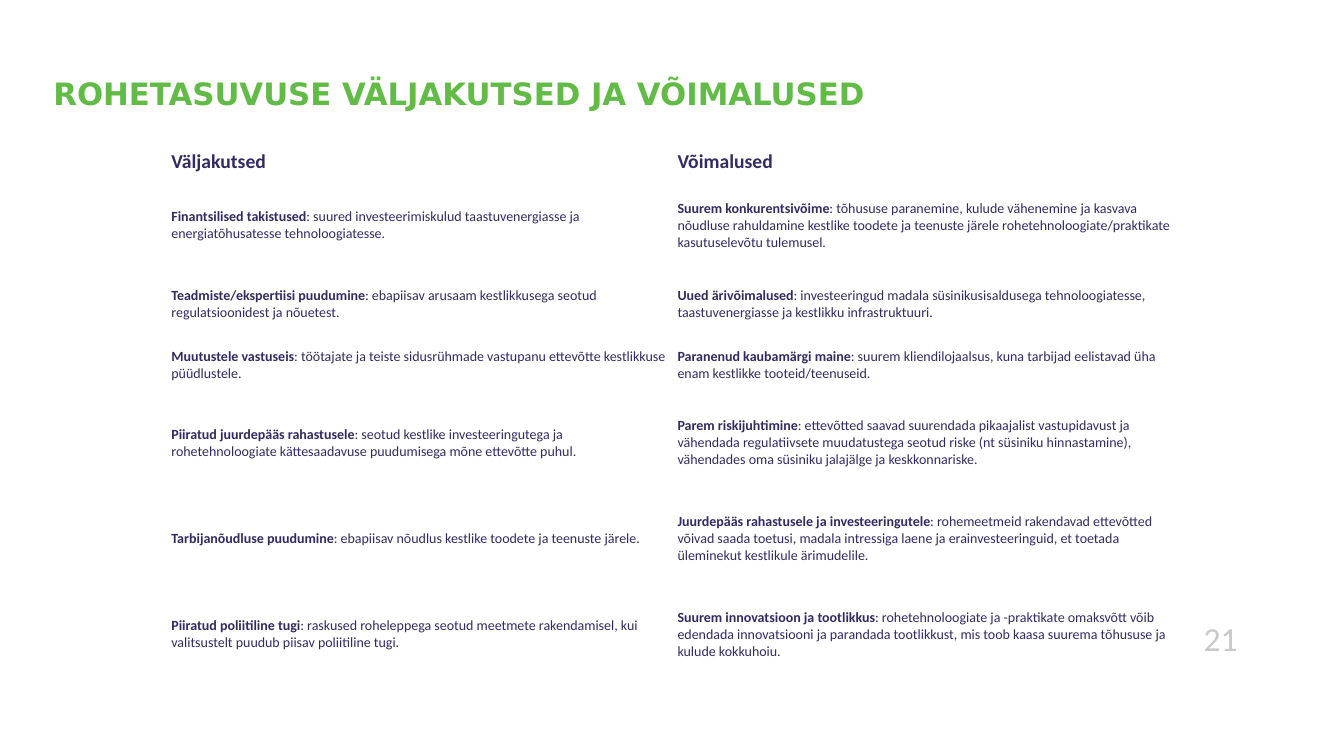
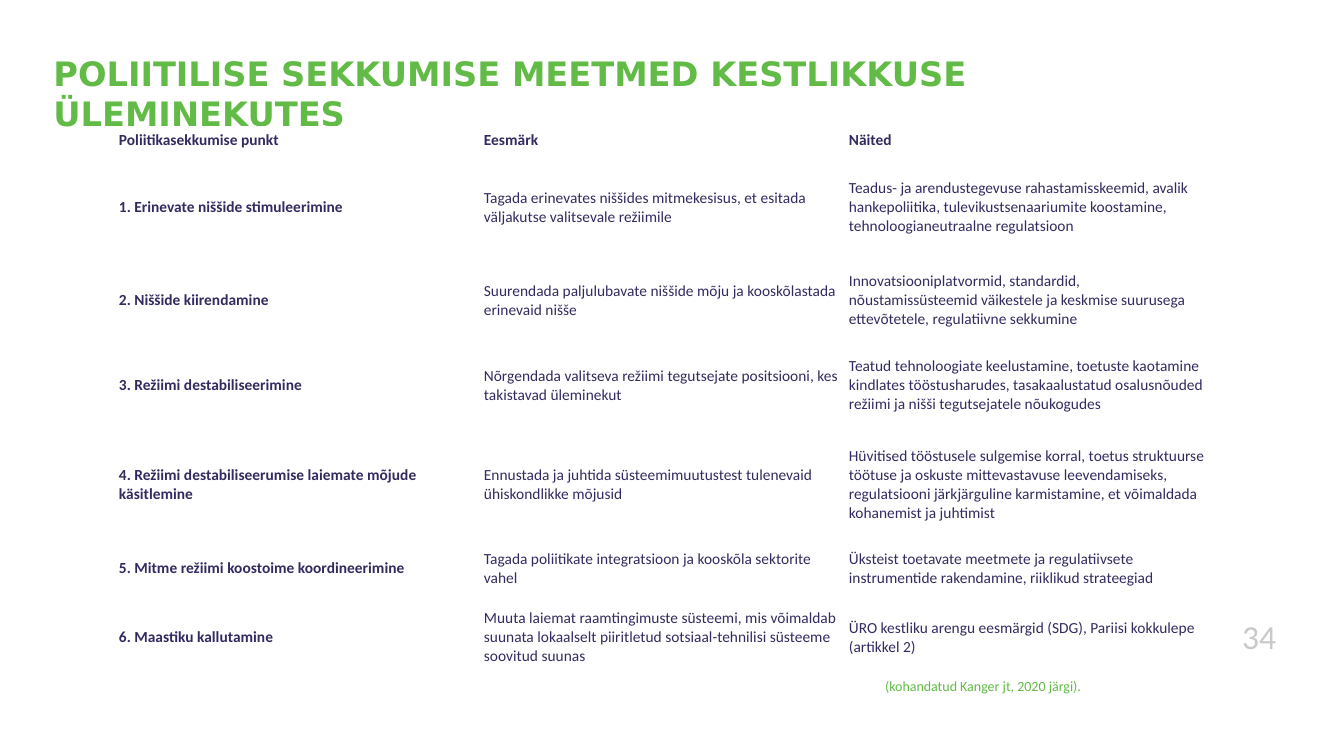
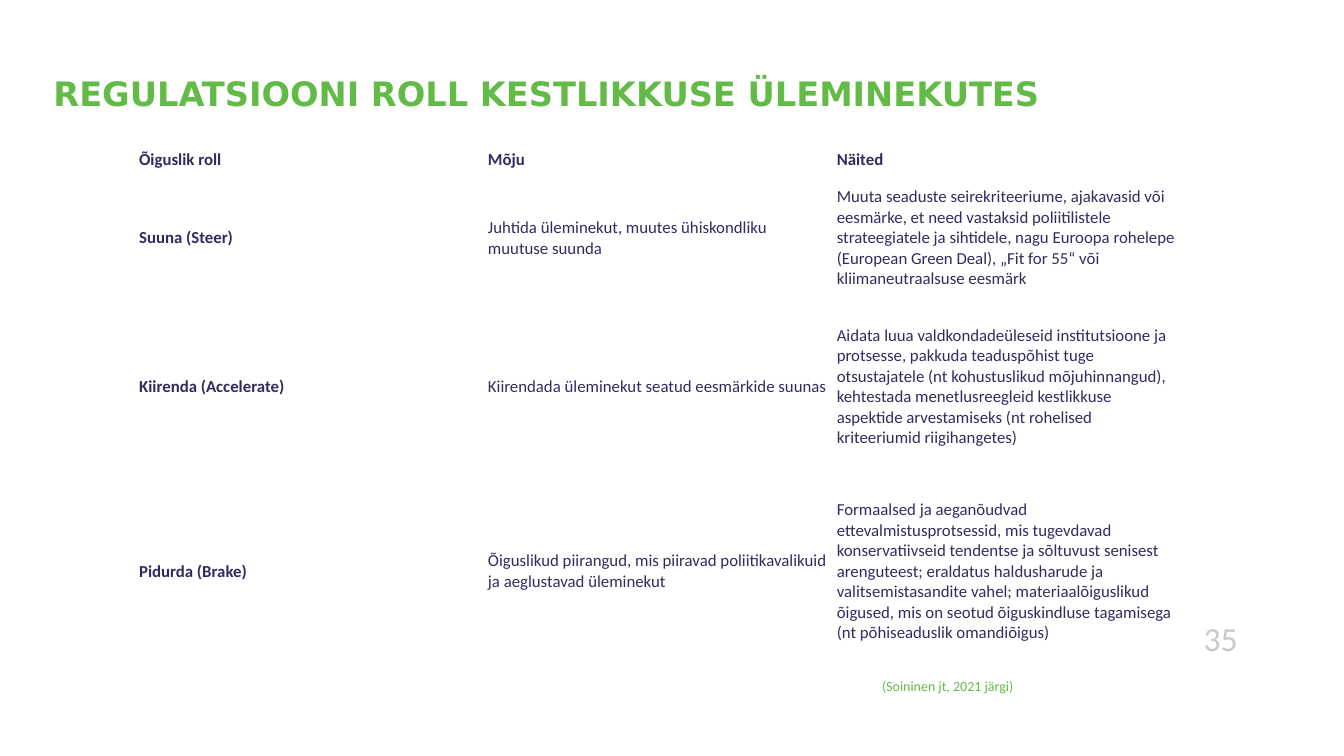
"""Build three slides on sustainability transitions, each with a title and a table."""
from pptx import Presentation
from pptx.dml.color import RGBColor
from pptx.enum import text
from pptx.util import Inches, Pt

GREEN = RGBColor(0x62, 0xBB, 0x46)
NAVY = RGBColor(0x33, 0x2B, 0x60)
GREY = RGBColor(0xC9, 0xC9, 0xC9)
HEAD, BODY = "DejaVu Sans", "Calibri"

SLIDES = [
    {
        "title": "ROHETASUVUSE VÄLJAKUTSED JA VÕIMALUSED", "size": 22,
        "at": (1.65, 1.44), "col": 5.02, "inset": (0.05, 0.03), "fonts": (14, 10),
        "heights": (0.32, 0.95, 0.61, 0.6, 0.95, 0.95, 0.95),
        "rows": [
            ("Väljakutsed", "Võimalused"),
            ("Finantsilised takistused: suured investeerimiskulud taastuvenergiasse ja energiatõhusatesse tehnoloogiatesse.",
             "Suurem konkurentsivõime: tõhususe paranemine, kulude vähenemine ja kasvava nõudluse rahuldamine kestlike toodete ja teenuste järele rohetehnoloogiate/praktikate kasutuselevõtu tulemusel."),
            ("Teadmiste/ekspertiisi puudumine: ebapiisav arusaam kestlikkusega seotud regulatsioonidest ja nõuetest.",
             "Uued ärivõimalused: investeeringud madala süsinikusisaldusega tehnoloogiatesse, taastuvenergiasse ja kestlikku infrastruktuuri."),
            ("Muutustele vastuseis: töötajate ja teiste sidusrühmade vastupanu ettevõtte kestlikkuse püüdlustele.",
             "Paranenud kaubamärgi maine: suurem kliendilojaalsus, kuna tarbijad eelistavad üha enam kestlikke tooteid/teenuseid."),
            ("Piiratud juurdepääs rahastusele: seotud kestlike investeeringutega ja rohetehnoloogiate kättesaadavuse puudumisega mõne ettevõtte puhul.",
             "Parem riskijuhtimine: ettevõtted saavad suurendada pikaajalist vastupidavust ja vähendada regulatiivsete muudatustega seotud riske (nt süsiniku hinnastamine), vähendades oma süsiniku jalajälge ja keskkonnariske."),
            ("Tarbijanõudluse puudumine: ebapiisav nõudlus kestlike toodete ja teenuste järele.",
             "Juurdepääs rahastusele ja investeeringutele: rohemeetmeid rakendavad ettevõtted võivad saada toetusi, madala intressiga laene ja erainvesteeringuid, et toetada üleminekut kestlikule ärimudelile."),
            ("Piiratud poliitiline tugi: raskused roheleppega seotud meetmete rakendamisel, kui valitsustelt puudub piisav poliitiline tugi.",
             "Suurem innovatsioon ja tootlikkus: rohetehnoloogiate ja -praktikate omaksvõtt võib edendada innovatsiooni ja parandada tootlikkust, mis toob kaasa suurema tõhususe ja kulude kokkuhoiu."),
        ],
        "note": None, "page": ("21", 11.84, 6.08),
    },
    {
        "title": "POLIITILISE SEKKUMISE MEETMED KESTLIKKUSE ÜLEMINEKUTES", "size": 24,
        "at": (1.14, 1.26), "col": 3.62, "inset": (0.04, 0.02), "fonts": (11, 11),
        "heights": (0.27, 1.06, 0.78, 0.91, 1.06, 0.6, 0.77),
        "rows": [
            ("Poliitikasekkumise punkt", "Eesmärk", "Näited"),
            ("1. Erinevate niššide stimuleerimine",
             "Tagada erinevates niššides mitmekesisus, et esitada väljakutse valitsevale režiimile",
             "Teadus- ja arendustegevuse rahastamisskeemid, avalik hankepoliitika, tulevikustsenaariumite koostamine, tehnoloogianeutraalne regulatsioon"),
            ("2. Niššide kiirendamine",
             "Suurendada paljulubavate niššide mõju ja kooskõlastada erinevaid nišše",
             "Innovatsiooniplatvormid, standardid, nõustamissüsteemid väikestele ja keskmise suurusega ettevõtetele, regulatiivne sekkumine"),
            ("3. Režiimi destabiliseerimine",
             "Nõrgendada valitseva režiimi tegutsejate positsiooni, kes takistavad üleminekut",
             "Teatud tehnoloogiate keelustamine, toetuste kaotamine kindlates tööstusharudes, tasakaalustatud osalusnõuded režiimi ja nišši tegutsejatele nõukogudes"),
            ("4. Režiimi destabiliseerumise laiemate mõjude käsitlemine",
             "Ennustada ja juhtida süsteemimuutustest tulenevaid ühiskondlikke mõjusid",
             "Hüvitised tööstusele sulgemise korral, toetus struktuurse töötuse ja oskuste mittevastavuse leevendamiseks, regulatsiooni järkjärguline karmistamine, et võimaldada kohanemist ja juhtimist"),
            ("5. Mitme režiimi koostoime koordineerimine",
             "Tagada poliitikate integratsioon ja kooskõla sektorite vahel",
             "Üksteist toetavate meetmete ja regulatiivsete instrumentide rakendamine, riiklikud strateegiad"),
            ("6. Maastiku kallutamine",
             "Muuta laiemat raamtingimuste süsteemi, mis võimaldab suunata lokaalselt piiritletud sotsiaal-tehnilisi süsteeme soovitud suunas",
             "ÜRO kestliku arengu eesmärgid (SDG), Pariisi kokkulepe (artikkel 2)"),
        ],
        "note": ("(kohandatud Kanger jt, 2020 järgi).", 8.68, 2.85),
        "page": ("34", 12.22, 6.06),
    },
    {
        "title": "REGULATSIOONI ROLL KESTLIKKUSE ÜLEMINEKUTES", "size": 24,
        "at": (1.33, 1.45), "col": 3.46, "inset": (0.05, 0.03), "fonts": (12, 12),
        "heights": (0.24, 1.3, 1.65, 2.01),
        "rows": [
            ("Õiguslik roll", "Mõju", "Näited"),
            ("Suuna (Steer)",
             "Juhtida üleminekut, muutes ühiskondliku muutuse suunda",
             "Muuta seaduste seirekriteeriume, ajakavasid või eesmärke, et need vastaksid poliitilistele strateegiatele ja sihtidele, nagu Euroopa rohelepe (European Green Deal), „Fit for 55“ või kliimaneutraalsuse eesmärk"),
            ("Kiirenda (Accelerate)",
             "Kiirendada üleminekut seatud eesmärkide suunas",
             "Aidata luua valdkondadeüleseid institutsioone ja protsesse, pakkuda teaduspõhist tuge otsustajatele (nt kohustuslikud mõjuhinnangud), kehtestada menetlusreegleid kestlikkuse aspektide arvestamiseks (nt rohelised kriteeriumid riigihangetes)"),
            ("Pidurda (Brake)",
             "Õiguslikud piirangud, mis piiravad poliitikavalikuid ja aeglustavad üleminekut",
             "Formaalsed ja aeganõudvad ettevalmistusprotsessid, mis tugevdavad konservatiivseid tendentse ja sõltuvust senisest arenguteest; eraldatus haldusharude ja valitsemistasandite vahel; materiaalõiguslikud õigused, mis on seotud õiguskindluse tagamisega (nt põhiseaduslik omandiõigus)"),
        ],
        "note": ("(Soininen jt, 2021 järgi)", 8.65, 1.57),
        "page": ("35", 11.84, 6.08),
    },
]


def style(run, size, color, bold=False, face=BODY):
    font = run.font
    font.size, font.bold, font.name = Pt(size), bold, face
    font.color.rgb = color


def add_title(slide, words, size):
    title = slide.shapes.title
    title.left, title.top, title.width, title.height = map(Inches, (0.43, 0.4, 10.45, 1.05))
    frame = title.text_frame
    frame.text = words
    frame.auto_size = text.MSO_AUTO_SIZE.NONE
    frame.vertical_anchor = text.MSO_ANCHOR.MIDDLE
    para = frame.paragraphs[0]
    para.alignment = text.PP_ALIGN.LEFT
    style(para.runs[0], size, GREEN, True, HEAD)


def add_label(slide, words, box, size, color):
    frame = slide.shapes.add_textbox(*map(Inches, box)).text_frame
    frame.word_wrap = True
    frame.text = words
    style(frame.paragraphs[0].runs[0], size, color)


def fill_cell(cell, words, size, bold, inset):
    cell.fill.background()
    cell.vertical_anchor = text.MSO_ANCHOR.MIDDLE
    cell.margin_left = cell.margin_right = Inches(inset[0])
    cell.margin_top = cell.margin_bottom = Inches(inset[1])
    para = cell.text_frame.paragraphs[0]
    lead, colon, rest = words.partition(":")
    parts = [(lead, True), (colon + rest, False)] if colon else [(words, bold)]
    for part, heavy in parts:
        run = para.add_run()
        run.text = part
        style(run, size, NAVY, heavy)


def add_grid(slide, data):
    rows, tall = data["rows"], data["heights"]
    count = len(rows[0])
    box = (*data["at"], data["col"] * count, sum(tall))
    grid = slide.shapes.add_table(len(rows), count, *map(Inches, box)).table
    grid.first_row = grid.horz_banding = False
    for r, row in enumerate(rows):
        grid.rows[r].height = Inches(tall[r])
        for c, words in enumerate(row):
            size = data["fonts"][min(r, 1)]
            fill_cell(grid.cell(r, c), words, size, r == 0 or c == 0, data["inset"])


def main():
    deck = Presentation()
    deck.slide_width, deck.slide_height = Inches(13.33), Inches(7.5)
    for data in SLIDES:
        slide = deck.slides.add_slide(deck.slide_layouts[5])
        add_title(slide, data["title"], data["size"])
        add_grid(slide, data)
        if data["note"]:
            words, left, width = data["note"]
            add_label(slide, words, (left, 6.67, width, 0.27), 10, GREEN)
        page, left, top = data["page"]
        add_label(slide, page, (left, top, 1.02, 0.5), 24, GREY)
    deck.save("out.pptx")


if __name__ == "__main__":
    main()
